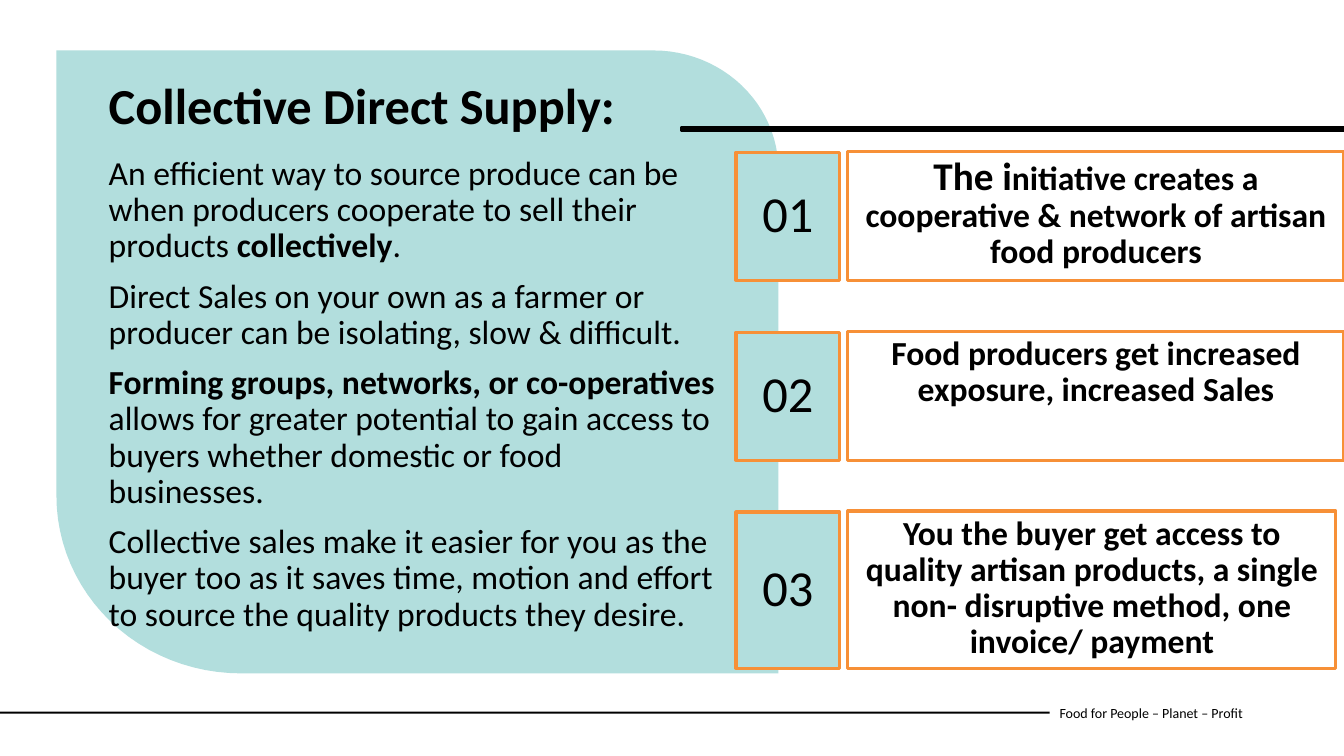
"""Build the Collective Direct Supply slide with its panel and three numbered benefits."""
from math import cos, pi, sin

from pptx import Presentation
from pptx.dml.color import RGBColor
from pptx.enum.shapes import MSO_CONNECTOR, MSO_SHAPE
from pptx.enum.text import MSO_ANCHOR, PP_ALIGN
from pptx.oxml.ns import qn
from pptx.util import Inches, Pt
from lxml.etree import SubElement

BLACK = RGBColor(0x00, 0x00, 0x00)
TEAL = RGBColor(0xB2, 0xDE, 0xDD)
ORANGE = RGBColor(0xF7, 0x90, 0x37)

presentation = Presentation()
presentation.slide_width = Inches(13.33)
presentation.slide_height = Inches(7.5)
COLUMN = presentation.slide_width / 100
ROW = presentation.slide_height / 100
slide = presentation.slides.add_slide(presentation.slide_layouts[6])


def place(left, top, width, height):
    """Turn columns and rows into a position and a size."""
    return int(left * COLUMN), int(top * ROW), int(width * COLUMN), int(height * ROW)


def write(paragraph, text, size=24, bold=False, align=PP_ALIGN.LEFT, spacing=0.9, before=10):
    """Add a run of text to a paragraph and format both."""
    paragraph.alignment = align
    paragraph.line_spacing = spacing
    paragraph.space_before = Pt(before)
    run = paragraph.add_run()
    run.text = text
    run.font.name = "Calibri"
    run.font.size = Pt(size)
    run.font.bold = bold
    run.font.color.rgb = BLACK


footer = slide.shapes.add_textbox(*place(78.1, 91.6, 20.48, 5.33))
footer.text_frame.word_wrap = True
footer.text_frame.vertical_anchor = MSO_ANCHOR.MIDDLE
write(footer.text_frame.paragraphs[0], "Food for People – Planet – Profit", size=10, spacing=1.0, before=0)

footer_line = slide.shapes.add_connector(MSO_CONNECTOR.STRAIGHT, *place(0, 94.27, 78.1, 94.27))
footer_line.end_connect(footer, 1)
footer_line.line.color.rgb = BLACK
footer_line.line.width = Pt(1.5)
SubElement(footer_line._element.spPr, qn("a:effectLst"))

LEFT, TOP, RIGHT, BOTTOM = 4.2, 6.67, 57.92, 89.07
angles = [step * pi / 48 for step in range(25)]
lower_corner = [(LEFT + 13.73 * (1 - sin(angle)), BOTTOM - 23.47 * (1 - cos(angle))) for angle in angles]
upper_corner = [(RIGHT - 9.31 * (1 - sin(angle)), TOP + 15.86 * (1 - cos(angle))) for angle in angles]
outline = lower_corner + [(LEFT, TOP)] + upper_corner
builder = slide.shapes.build_freeform(int(RIGHT * COLUMN), int(BOTTOM * ROW))
builder.add_line_segments([(int(x * COLUMN), int(y * ROW)) for x, y in outline])
panel = builder.convert_to_shape()
panel.shadow.inherit = False
panel.fill.solid()
panel.fill.fore_color.rgb = TEAL
panel.line.fill.background()

title_bar = slide.shapes.add_shape(MSO_SHAPE.RECTANGLE, *place(50.71, 16.8, 49.29, 0.53))
title_bar.shadow.inherit = False
title_bar.fill.solid()
title_bar.fill.fore_color.rgb = BLACK
title_bar.line.color.rgb = BLACK
title_bar.line.width = Pt(1.93)

body_paragraphs = [
    [("An efficient way to source produce can be when producers cooperate to sell their products ", False),
     ("collectively", True), (".", False)],
    [("Direct Sales on your own as a farmer or producer can be isolating, slow & difficult.", False)],
    [("Forming groups, networks, or co-operatives ", True),
     ("allows for greater potential to gain access to buyers whether domestic or food businesses.", False)],
    [("Collective sales make it easier for you as the buyer too as it saves time, motion and effort "
      "to source the quality products they desire.", False)],
]
body = slide.shapes.add_textbox(*place(7.35, 20, 46.74, 51.07))
body.text_frame.word_wrap = True
for index, runs in enumerate(body_paragraphs):
    paragraph = body.text_frame.add_paragraph() if index else body.text_frame.paragraphs[0]
    for text, bold in runs:
        write(paragraph, text, bold=bold)

title = slide.shapes.add_textbox(*place(7.35, 10, 40.96, 14.53))
title.text_frame.word_wrap = True
write(title.text_frame.paragraphs[0], "Collective Direct Supply:", size=36, bold=True)

benefits = [
    (36.91, 17.07, [("The i", 28), ("nitiative creates a cooperative & network of artisan food producers", 24)]),
    (36.91, 17.07, [("Food producers get increased exposure, increased Sales", 24)]),
    (36.31, 20.8, [("You the buyer get access to quality artisan products, a single non- disruptive method, "
                    "one invoice/ payment", 24)]),
]
for index, (width, height, runs) in enumerate(benefits):
    top = 20 + 23.8 * index
    number = slide.shapes.add_shape(MSO_SHAPE.RECTANGLE, *place(54.76, top + 0.13, 7.73, height - 0.13))
    number.fill.solid()
    number.fill.fore_color.rgb = TEAL
    number.text_frame.vertical_anchor = MSO_ANCHOR.MIDDLE
    write(number.text_frame.paragraphs[0], f"{index + 1:02}", size=36, align=PP_ALIGN.CENTER)

    benefit = slide.shapes.add_shape(MSO_SHAPE.RECTANGLE, *place(63.09, top, width, height))
    benefit.fill.background()
    benefit.text_frame.vertical_anchor = MSO_ANCHOR.TOP
    for text, size in runs:
        write(benefit.text_frame.paragraphs[0], text, size=size, bold=True, align=PP_ALIGN.CENTER)

    for shape in (number, benefit):
        shape.shadow.inherit = False
        shape.line.color.rgb = ORANGE
        shape.line.width = Pt(2.25)
        shape.text_frame.word_wrap = True

presentation.save("out.pptx")
